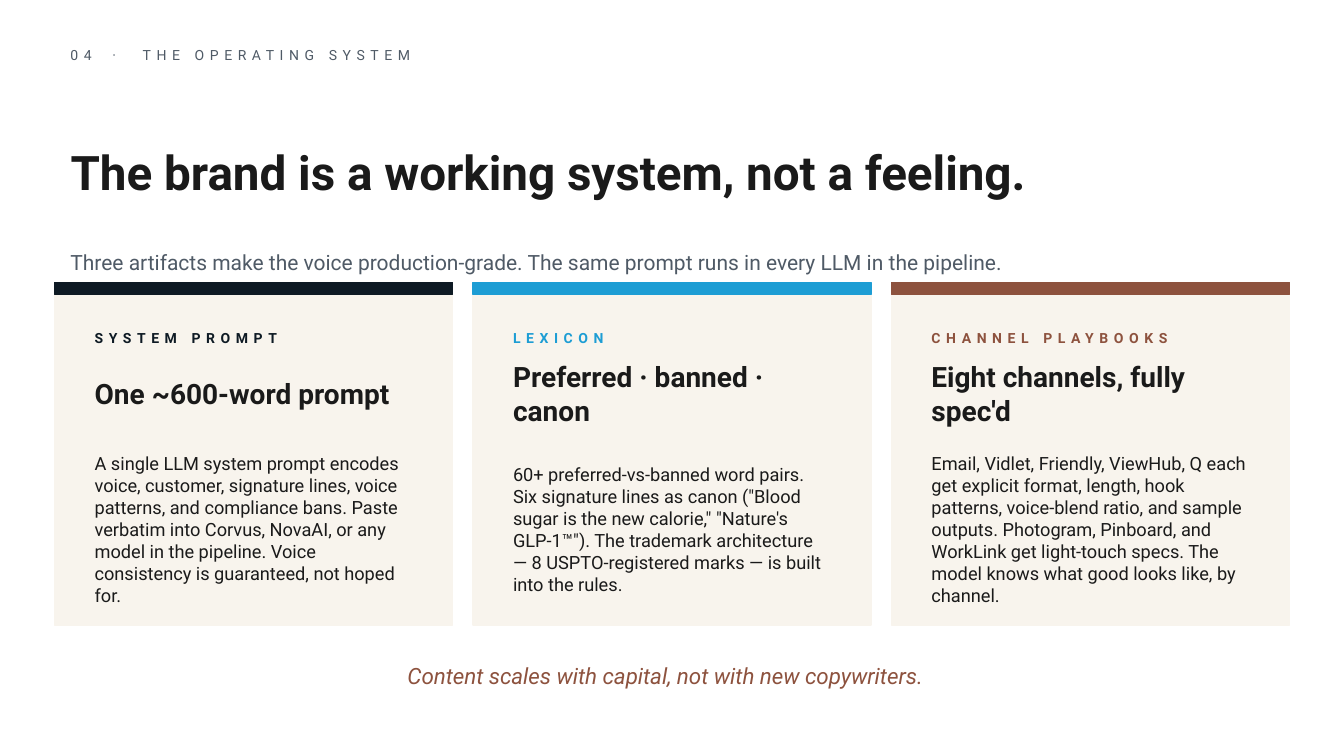
from pptx import Presentation, util as u
from pptx.dml.color import RGBColor
from pptx.enum import shapes, text

INK, GREY, NAVY, BLUE, RUST, CREAM = "1A1A1A", "4F5A66", "0E1A24", "1D9DD4", "8D523E", "F8F4ED"
LEFT, WIDE = 0.6, 12
EDGE, STEP, CARD, PAD = 0.54, 4.15, 3.95, 0.3
TOP, TALL, BAND = 2.8, 3.4, 0.12

deck = Presentation()
deck.slide_width, deck.slide_height = u.Inches(13.33), u.Inches(7.5)
slide = deck.slides.add_slide(deck.slide_layouts[5])


def write(box, parts, color, align=text.PP_ALIGN.LEFT, **form):
    frame = box.text_frame
    frame.word_wrap = True
    frame.auto_size = text.MSO_AUTO_SIZE.NONE
    frame.vertical_anchor = text.MSO_ANCHOR.MIDDLE
    para = frame.paragraphs[0]
    para.alignment = align
    for words, gap in parts:
        run = para.add_run()
        run.text = words
        run.font.color.rgb = RGBColor.from_string(color)
        for key, value in {"name": "Roboto", **form}.items():
            setattr(run.font, key, value)
        if gap:
            run.font._element.set("spc", str(gap))


def place(x, y, w, h, fill=None):
    area = [u.Inches(n) for n in (x, y, w, h)]
    if not fill:
        return slide.shapes.add_textbox(*area)
    rect = slide.shapes.add_shape(shapes.MSO_SHAPE.RECTANGLE, *area)
    rect.shadow.inherit = False
    rect.fill.solid()
    rect.fill.fore_color.rgb = rect.line.color.rgb = RGBColor.from_string(fill)
    rect.line.width = u.Pt(1)
    return rect


title = slide.shapes.title
for key, value in {"left": LEFT, "top": 0.85, "width": WIDE, "height": 1.7}.items():
    setattr(title, key, u.Inches(value))
write(title, [("The brand is a working system, not a feeling.", 0)], INK, size=u.Pt(34), bold=True)

write(place(LEFT, 0.4, WIDE, 0.3),
      [("04", 400), (" · ", 830), ("THE OPERATING SYSTEM", 400)], GREY, size=u.Pt(10))
write(place(LEFT, 2.4, WIDE, 0.4),
      [("Three artifacts make the voice production-grade. "
        "The same prompt runs in every LLM in the pipeline.", 0)], GREY, size=u.Pt(15))

cards = [
    (NAVY, "SYSTEM PROMPT", "One ~600-word prompt",
     "A single LLM system prompt encodes voice, customer, signature lines, voice patterns, "
     "and compliance bans. Paste verbatim into Corvus, NovaAI, or any model in the pipeline. "
     "Voice consistency is guaranteed, not hoped for."),
    (BLUE, "LEXICON", "Preferred · banned · canon",
     "60+ preferred-vs-banned word pairs. Six signature lines as canon (\"Blood sugar is the "
     "new calorie,\" \"Nature's GLP-1™\"). The trademark architecture — 8 USPTO-registered "
     "marks — is built into the rules."),
    (RUST, "CHANNEL PLAYBOOKS", "Eight channels, fully spec'd",
     "Email, Vidlet, Friendly, ViewHub, Q each get explicit format, length, hook patterns, "
     "voice-blend ratio, and sample outputs. Photogram, Pinboard, and WorkLink get "
     "light-touch specs. The model knows what good looks like, by channel."),
]
for col, (hue, label, head, body) in enumerate(cards):
    x = EDGE + col * STEP
    place(x, TOP, CARD, TALL, CREAM)
    place(x, TOP, CARD, BAND, hue)
    rows = [(3.2, 0.3, label, 400, hue, 10, True),
            (3.55, 0.7, head, 0, INK, 20, True),
            (4.4, 1.7, body, 0, INK, 13, False)]
    for y, h, words, gap, color, size, bold in rows:
        write(place(x + PAD, y, CARD - 2 * PAD, h), [(words, gap)], color,
              size=u.Pt(size), bold=bold)

write(place(LEFT, 6.5, WIDE, 0.4),
      [("Content scales with capital, not with new copywriters.", 0)], RUST,
      text.PP_ALIGN.CENTER, size=u.Pt(16), italic=True)

deck.save("out.pptx")
